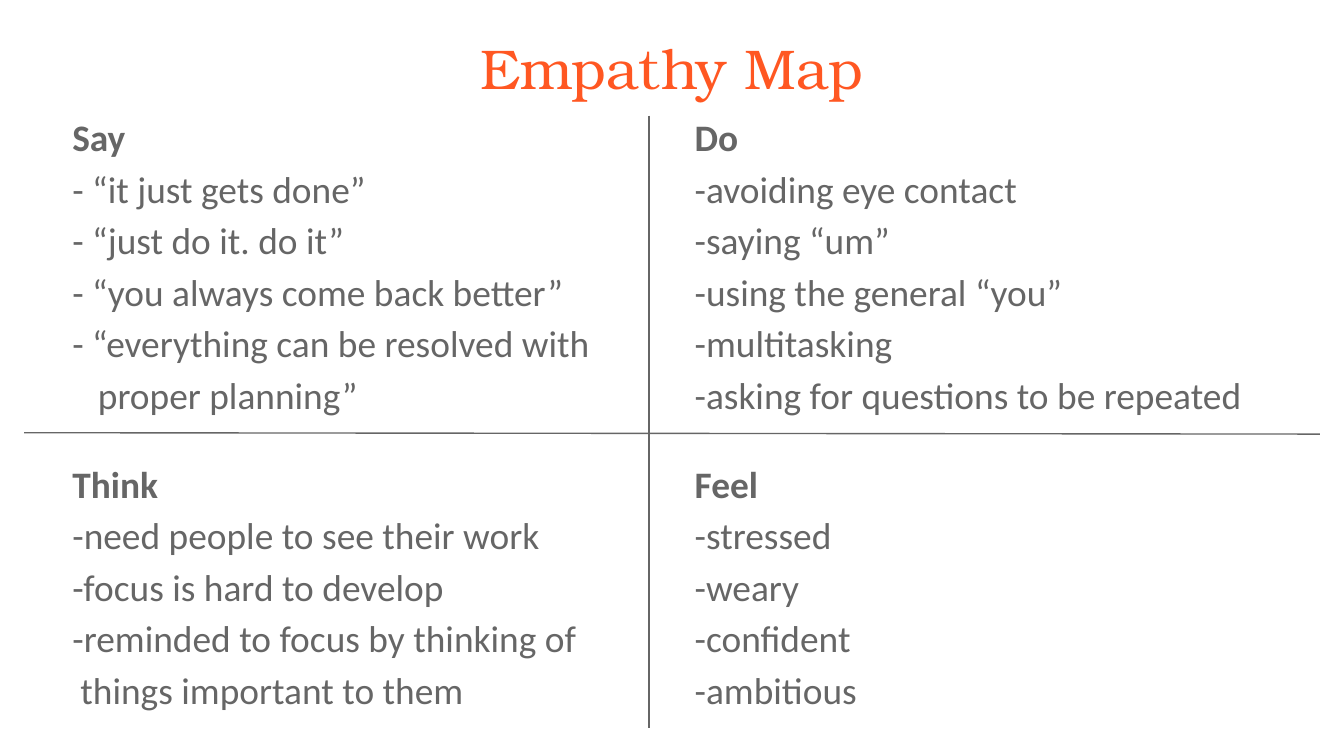
"""Build an empathy map slide with four quadrants."""
from pptx import Presentation
from pptx.dml.color import RGBColor
from pptx.enum import shapes, text
from pptx.oxml.ns import qn
from pptx.util import Inches, Pt

GREY, ORANGE = "666666", "FF5722"
TITLE = "Empathy Map"
LEFT, RIGHT, TOP, LOW = 0.44, 5.07, 0.7, 3.28
QUADS = [
    (LEFT, TOP, 4.74, 2.11, 0.19, "Say", [
        "- “it just gets done”", "- “just do it. do it”",
        "- “you always come back better”",
        "- “everything can be resolved with\vproper planning”"]),
    (LEFT, LOW, 4.74, 1.96, 0.06, "Think", [
        "-need people to see their work", "-focus is hard to develop",
        "-reminded to focus by thinking of\vthings important to them"]),
    (RIGHT, TOP, 4.74, 2.11, 0, "Do", [
        "-avoiding eye contact", "-saying “um”", "-using the general “you”",
        "-multitasking", "-asking for questions to be repeated"]),
    (RIGHT, LOW, 4.59, 1.96, 0, "Feel", [
        "-stressed", "-weary", "-confident", "-ambitious"]),
]
LINES = [(4.83, 0.86, 4.83, 5.42), (0.18, 3.22, 9.82, 3.23)]


def color(code):
    return RGBColor.from_string(code)


def add_text(slide, box, lines, size, face, code):
    frame = slide.shapes.add_textbox(*map(Inches, box)).text_frame
    frame.word_wrap = True
    frame.vertical_anchor = text.MSO_ANCHOR.TOP
    frame.margin_left = frame.margin_right = Inches(0.1)
    frame.margin_top = frame.margin_bottom = Inches(0.1)
    frame.text = "\n".join(lines)
    for para, line in zip(frame.paragraphs, lines):
        para.text = line
        for run in para.runs:
            run.font.size = Pt(size)
            run.font.name = face
            run.font.color.rgb = color(code)
    return frame.paragraphs


def add_quad(slide, left, top, width, height, hang, head, items):
    box = (left, top, width, height)
    paras = add_text(slide, box, [head] + items, 20, "Calibri", GREY)
    paras[0].runs[0].font.bold = True
    for para in paras:
        para.line_spacing = 1.15
        if "\v" in para.text:
            props = para._p.get_or_add_pPr()
            props.set("marL", str(Inches(hang)))
            props.set("indent", str(-Inches(hang)))
    paras[-1].space_after = Pt(16)


def add_line(slide, ends):
    line = slide.shapes.add_connector(
        shapes.MSO_CONNECTOR.STRAIGHT, *map(Inches, ends))
    line.line.color.rgb = color(GREY)
    line.line.width = Pt(0.75)
    props = line._element.spPr
    props.append(props.makeelement(qn("a:effectLst"), {}))


def main():
    deck = Presentation()
    deck.slide_width = Inches(10)
    deck.slide_height = deck.slide_width * 9 // 16
    slide = deck.slides.add_slide(deck.slide_layouts[6])
    title = add_text(slide, (0.34, 0.15, 9.32, 0.63), [TITLE], 30,
                     "TeX Gyre Bonum", ORANGE)
    title[0].alignment = text.PP_ALIGN.CENTER
    for quad in QUADS:
        add_quad(slide, *quad)
    for ends in LINES:
        add_line(slide, ends)
    deck.save("out.pptx")


if __name__ == "__main__":
    main()
